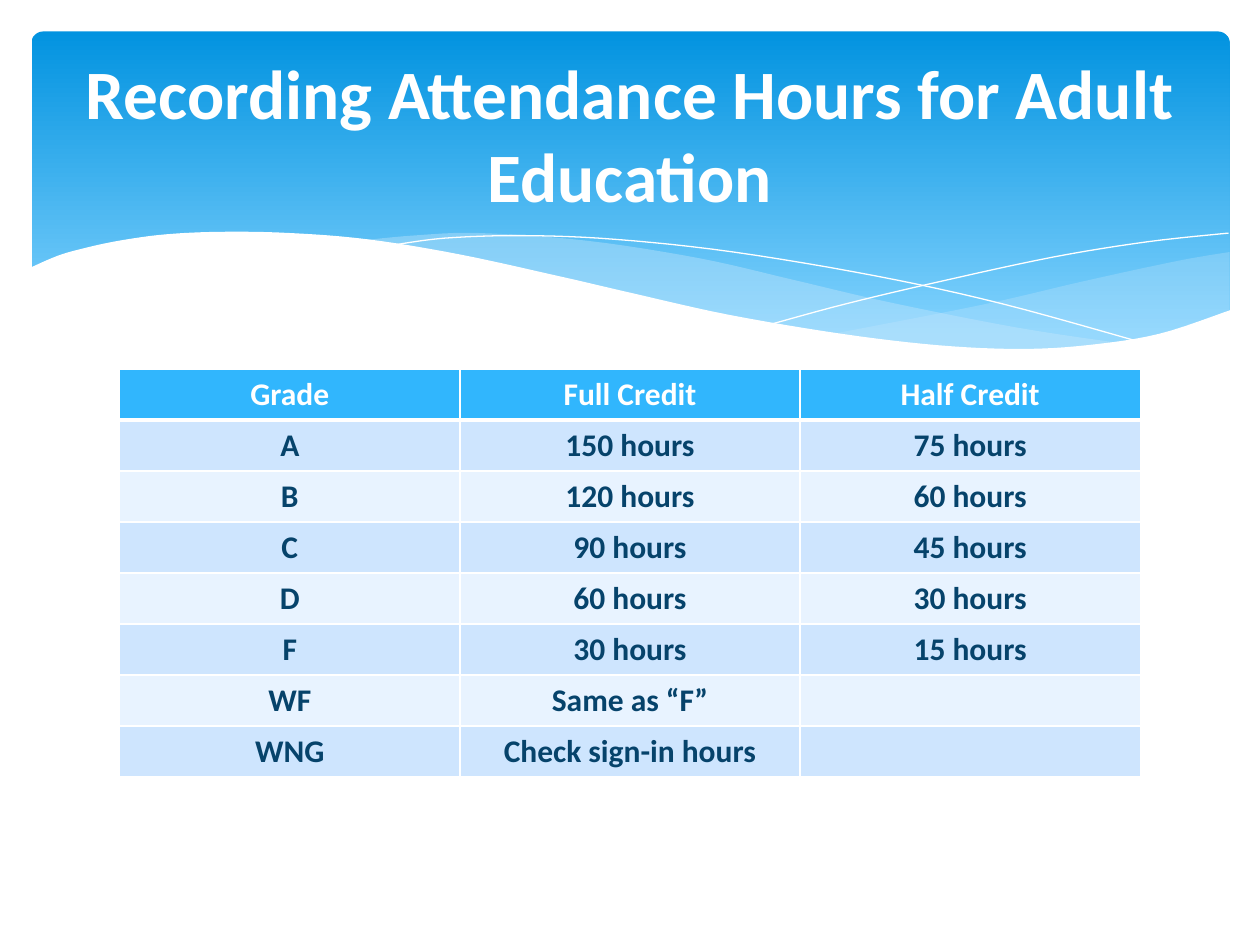
from lxml import etree
from pptx import Presentation
from pptx.dml.color import RGBColor
from pptx.enum.shapes import MSO_SHAPE
from pptx.enum.text import MSO_ANCHOR, PP_ALIGN
from pptx.oxml.ns import qn
from pptx.util import Inches, Pt

CENTER, MIDDLE = PP_ALIGN.CENTER, MSO_ANCHOR.MIDDLE
ROUNDED = MSO_SHAPE.ROUNDED_RECTANGLE

THEME = {
    "font": "Calibri", "title_size": Pt(39.6), "table_size": Pt(18),
    "white": "FFFFFF", "ink": "06436B", "header": "31B6FD",
    "bands": ("CEE5FE", "E8F3FF"), "ribbon": "C6E7FC",
    "sky_top": "0293E0", "sky_bottom": "83D3FE",
}
COLOR = RGBColor.from_string

deck = Presentation()
deck.slide_width, deck.slide_height = Inches(10), Inches(7.5)
page = deck.slides.add_slide(deck.slide_layouts[6])
UNIT = deck.slide_width // 100  # the grid has 100 columns and 75 rows


def smooth(knots, steps=6):
    """Return points on a Catmull-Rom curve through the knots."""
    padded = [knots[0], *knots, knots[-1]]
    points = [knots[0]]
    for a, b, c, d in zip(padded, padded[1:], padded[2:], padded[3:]):
        for step in range(1, steps + 1):
            t = step / steps
            points.append(tuple(
                (2 * q + (r - p) * t + (2 * p - 5 * q + 4 * r - s) * t ** 2
                 + (3 * q - p - 3 * r + s) * t ** 3) / 2
                for p, q, r, s in zip(a, b, c, d)))
    return points


def add_outline(points, closed):
    """Draw a freeform through grid points, without fill, line or shadow."""
    emu = [(round(x * UNIT), round(y * UNIT)) for x, y in points]
    builder = page.shapes.build_freeform(*emu[0])
    builder.add_line_segments(emu[1:], close=closed)
    shape = builder.convert_to_shape()
    shape.shadow.inherit = False
    shape.fill.background()
    shape.line.fill.background()
    return shape


# Sky panel
sky = page.shapes.add_shape(ROUNDED, *(n * UNIT for n in (2.5, 2.5, 95.1, 27)))
sky.adjustments[0] = 0.034
sky.shadow.inherit = False
sky.line.fill.background()
sky.fill.gradient()
sky.fill.gradient_angle = 270
for stop, position, color in zip(sky.fill.gradient_stops, (0, 0.9),
                                 (THEME["sky_top"], THEME["sky_bottom"])):
    stop.position = position
    stop.color.rgb = COLOR(color)

# Translucent ribbons: upper edge, lower edge, opacity in percent
ribbons = [
    ([(97.6, 20), (93.5, 20.7), (86.1, 22.3), (77.9, 24.2), (66.1, 26.5)],
     [(66.1, 26.5), (73.2, 27.4), (80.3, 27.8), (87.2, 27.4), (92.8, 26.3), (97.6, 24.7)],
     29),
    ([(89.3, 27.3), (80.7, 26), (70.6, 24), (62.9, 22.2), (55.5, 20.5),
      (46.5, 19.1), (38, 18.5), (32.8, 18.7), (28.6, 19.1)],
     [(28.6, 19.1), (36.2, 20.3), (44.9, 22.2), (56.6, 24.8), (66.5, 26.6),
      (74.8, 27.6), (81.8, 27.8), (89.3, 27.3)],
     40),
]
for upper, lower, opacity in ribbons:
    ribbon = add_outline(smooth(upper) + smooth(lower), closed=True)
    ribbon.fill.solid()
    ribbon.fill.fore_color.rgb = COLOR(THEME["ribbon"])
    tint = ribbon._element.spPr.find(qn("a:solidFill")).find(qn("a:srgbClr"))
    etree.SubElement(tint, qn("a:alpha"), val=str(opacity * 1000))

# Hairlines
hairlines = [
    [(30.9, 19.5), (35.3, 18.9), (41.6, 18.7), (48.9, 19), (58.2, 20),
     (69.5, 21.9), (79.5, 24.1), (90.7, 27.2)],
    [(61.3, 25.7), (67.2, 24.1), (74.8, 22.3), (83.6, 20.4), (91, 19.2), (97.5, 18.5)],
]
for knots in hairlines:
    hairline = add_outline(smooth(knots), closed=False)
    hairline.line.color.rgb = COLOR(THEME["white"])
    hairline.line.width = Pt(0)

# White wave that cuts the lower edge of the panel
crest = [(97.7, 24.6), (92, 26.5), (86.3, 27.4), (80.9, 27.7), (74.4, 27.4),
         (66.8, 26.5), (57.9, 25), (50.3, 23.3), (44.7, 22), (36.5, 20.2),
         (29.2, 19), (23, 18.5), (17.7, 18.4), (13.2, 18.6), (9.5, 19.1),
         (6.7, 19.7), (4.6, 20.3), (2.3, 21.3)]
wave = add_outline(smooth(crest) + [(2.3, 32.9), (97.7, 32.9)], closed=True)
wave.fill.solid()
wave.fill.fore_color.rgb = COLOR(THEME["white"])

# Title
title = page.shapes.add_textbox(*(round(n * UNIT) for n in (5, 3.7, 90, 13.7)))
frame = title.text_frame
frame.word_wrap = True
frame.vertical_anchor = MIDDLE
para = frame.paragraphs[0]
para.text = "Recording Attendance Hours for Adult Education"
para.alignment = CENTER
para.font.name, para.font.size, para.font.bold = THEME["font"], THEME["title_size"], True
para.font.color.rgb = COLOR(THEME["white"])

# Credit hours table
credit_rows = [
    ("Grade", "Full Credit", "Half Credit"),
    ("A", "150 hours", "75 hours"),
    ("B", "120 hours", "60 hours"),
    ("C", "90 hours", "45 hours"),
    ("D", "60 hours", "30 hours"),
    ("F", "30 hours", "15 hours"),
    ("WF", "Same as “F”", ""),
    ("WNG", "Check sign-in hours", ""),
]
table = page.shapes.add_table(
    len(credit_rows), 3, *(round(n * UNIT) for n in (9.5, 29.3, 81, 32.4))).table
for row, texts in enumerate(credit_rows):
    is_header = row == 0
    for column, text in enumerate(texts):
        cell = table.cell(row, column)
        cell.fill.solid()
        cell.fill.fore_color.rgb = COLOR(
            THEME["header"] if is_header else THEME["bands"][(row - 1) % 2])
        para = cell.text_frame.paragraphs[0]
        para.text = text
        para.alignment = CENTER
        para.font.name, para.font.size, para.font.bold = THEME["font"], THEME["table_size"], True
        para.font.color.rgb = COLOR(THEME["white"] if is_header else THEME["ink"])
        widths = {"L": 1, "R": 1, "T": 3 if row == 1 else 1, "B": 3 if is_header else 1}
        for index, (side, width) in enumerate(widths.items()):
            border = etree.Element(qn(f"a:ln{side}"), w=str(Pt(width)))
            paint = etree.SubElement(border, qn("a:solidFill"))
            etree.SubElement(paint, qn("a:srgbClr"), val=THEME["white"])
            cell._tc.get_or_add_tcPr().insert(index, border)

deck.save("out.pptx")
